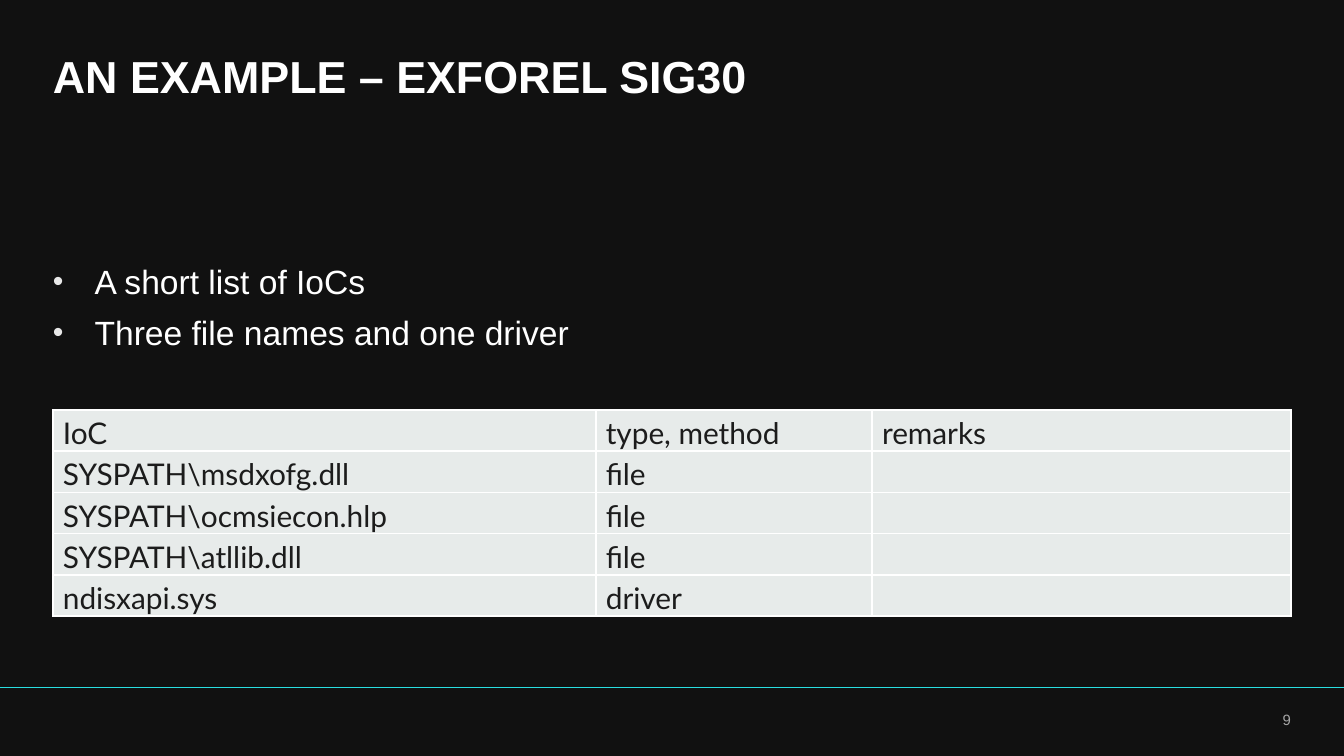
"""Build a dark slide with a title, two bullets and a table of IoCs."""
from pptx import Presentation
from pptx.dml.color import RGBColor as RGB
from pptx.enum.shapes import MSO_CONNECTOR as CONNECTOR
from pptx.enum.text import MSO_ANCHOR as ANCHOR, PP_ALIGN as ALIGN
from pptx.oxml import parse_xml
from pptx.oxml.ns import nsdecls
from pptx.util import Cm, Pt

COLORS = {
    "background": "111111", "accent": "29DEE0", "white": "FFFFFF",
    "page": "A6A6A6", "bullet": "E8E8E8", "cell": "E7EBEA", "ink": "1C1C1C",
}
FORMATS = {
    "title": {"name": "Arial", "size": Pt(24), "bold": True, "color": "white"},
    "body": {"name": "Arial", "size": Pt(18), "color": "white"},
    "page": {"name": "Arial", "size": Pt(8), "color": "page"},
    "cell": {"name": "Lato", "size": Pt(16), "color": "ink"},
}
MARGIN, CONTENT_W = 1, 23.4
COLUMNS = (10.26, 5.22, 7.92)
ROW_H = 0.775
ROWS = (
    ("IoC", "type, method", "remarks"),
    (r"SYSPATH\msdxofg.dll", "file", ""),
    (r"SYSPATH\ocmsiecon.hlp", "file", ""),
    (r"SYSPATH\atllib.dll", "file", ""),
    ("ndisxapi.sys", "driver", ""),
)


def rgb(key):
    return RGB.from_string(COLORS[key])


def xml(tag, attrs="", inner=""):
    return parse_xml(f"<a:{tag} {nsdecls('a')} {attrs}>{inner}</a:{tag}>")


def solid(key):
    return f'<a:solidFill><a:srgbClr val="{COLORS[key]}"/></a:solidFill>'


def add_run(p, text, kind):
    r = p.add_run()
    r.text = text
    for name, value in FORMATS[kind].items():
        if name == "color":
            r.font.color.rgb = rgb(value)
        else:
            setattr(r.font, name, value)


def add_bullet(p):
    indent = Cm(0.79)
    pPr = p._p.get_or_add_pPr()
    pPr.set("marL", str(indent))
    pPr.set("indent", str(-indent))
    pPr.append(xml("buClr", inner=f'<a:srgbClr val="{COLORS["bullet"]}"/>'))
    pPr.append(xml("buSzPct", 'val="90000"'))
    pPr.append(xml("buFont", 'typeface="Arial"'))
    pPr.append(xml("buChar", 'char="•"'))


def add_text(s, box, lines, kind, bullets=False, **layout):
    tf = s.shapes.add_textbox(*map(Cm, box)).text_frame
    frame = {"word_wrap": True, "vertical_anchor": ANCHOR.TOP, "margin_left": 0,
             "margin_right": 0, "margin_top": 0, "margin_bottom": 0}
    for name, value in frame.items():
        setattr(tf, name, value)
    for i, line in enumerate(lines):
        p = tf.add_paragraph() if i else tf.paragraphs[0]
        if bullets:
            add_bullet(p)
            p.space_before = Pt(3 if i else 0)
            p.space_after = Pt(3)
        for name, value in layout.items():
            setattr(p, name, value)
        add_run(p, line, kind)


def add_rule(s, y, width):
    line = s.shapes.add_connector(CONNECTOR.STRAIGHT, 0, Cm(y), width, Cm(y))
    line.line.color.rgb = rgb("accent")
    line.line.width = Pt(0.75)
    line._element.spPr.append(xml("effectLst"))


def format_cell(cell, text):
    margins = {"margin_left": Cm(0.19), "margin_right": Cm(0.19),
               "margin_top": 0, "margin_bottom": 0}
    for name, value in margins.items():
        setattr(cell, name, value)
    tcPr = cell._tc.get_or_add_tcPr()
    for side in "LRTB":
        tcPr.append(xml(f"ln{side}", f'w="{Pt(1)}"', solid("white")))
    cell.fill.solid()
    cell.fill.fore_color.rgb = rgb("cell")
    if text:
        p = cell.text_frame.paragraphs[0]
        p.line_spacing = 1.15
        add_run(p, text, "cell")


def add_ioc_table(s, top):
    box = (MARGIN, top, CONTENT_W, ROW_H * len(ROWS))
    table = s.shapes.add_table(len(ROWS), len(COLUMNS), *map(Cm, box)).table
    table.first_row = table.horz_banding = False
    for column, width in zip(table.columns, COLUMNS):
        column.width = Cm(width)
    for row, texts in zip(table.rows, ROWS):
        row.height = Cm(ROW_H)
        for cell, text in zip(row.cells, texts):
            format_cell(cell, text)


def main():
    prs = Presentation()
    prs.slide_width, prs.slide_height = Cm(25.4), Cm(14.29)
    s = prs.slides.add_slide(prs.slide_layouts[6])
    s.background.fill.solid()
    s.background.fill.fore_color.rgb = rgb("background")
    add_rule(s, 13, prs.slide_width)
    add_text(s, (MARGIN, 0.9, CONTENT_W, 1.85), ["AN EXAMPLE – EXFOREL SIG30"],
             "title", line_spacing=Pt(29.2))
    add_text(s, (23.64, 13.44, 0.76, 0.4), ["9"], "page", alignment=ALIGN.RIGHT)
    add_text(s, (MARGIN, 4.93, CONTENT_W, 7.4),
             ["A short list of IoCs", "Three file names and one driver"],
             "body", bullets=True)
    add_ioc_table(s, 7.75)
    prs.save("out.pptx")


if __name__ == "__main__":
    main()
